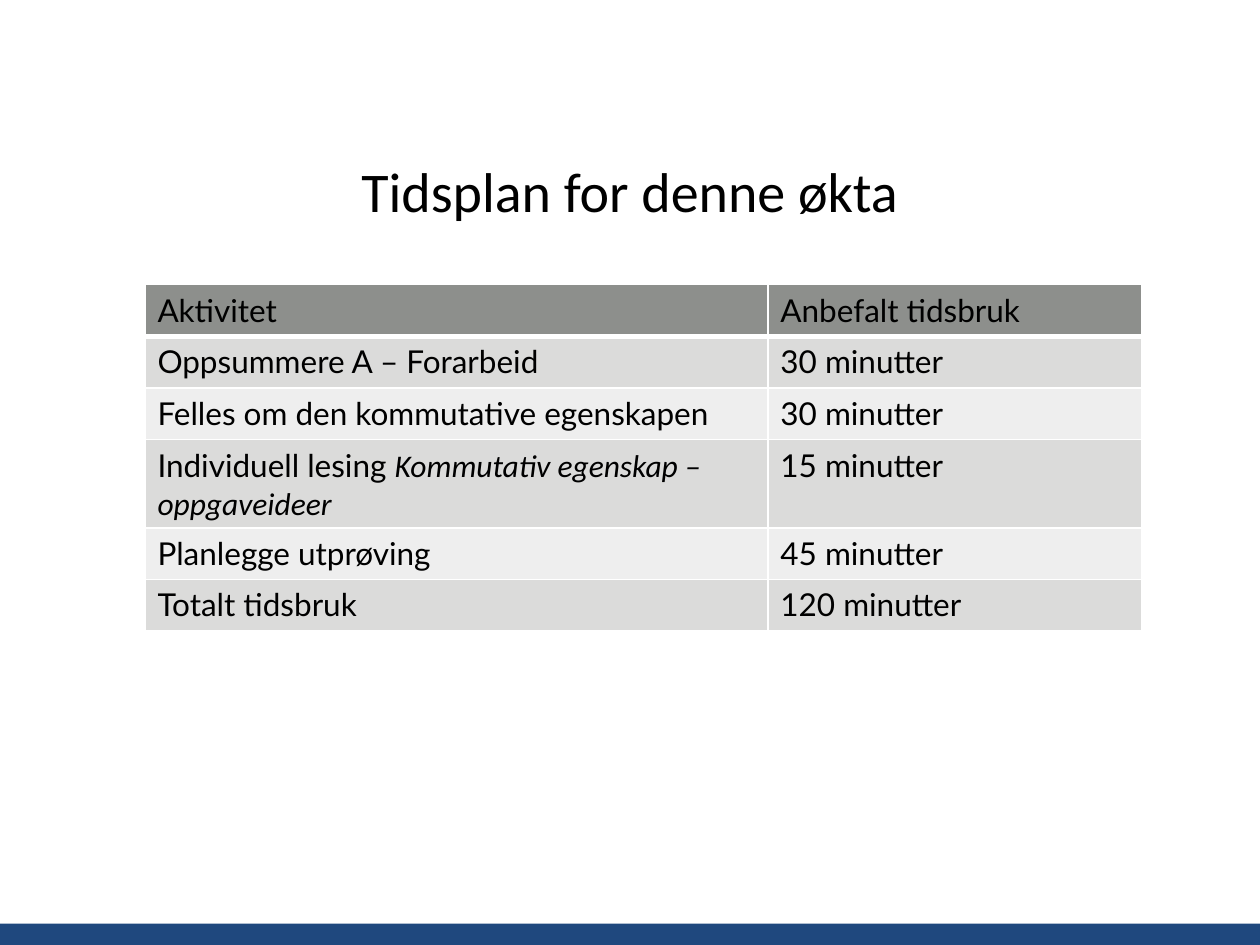
from lxml import etree
from pptx import Presentation
from pptx.dml.color import RGBColor
from pptx.enum.shapes import MSO_SHAPE
from pptx.enum.text import MSO_ANCHOR, PP_ALIGN
from pptx.oxml.ns import qn
from pptx.util import Inches, Pt

RECTANGLE = MSO_SHAPE.RECTANGLE
MIDDLE = MSO_ANCHOR.MIDDLE
LEFT, CENTER = PP_ALIGN.LEFT, PP_ALIGN.CENTER

WIDTH, HEIGHT = 10, 7.5
FOOTER_HEIGHT = 0.17
ROW_HEIGHT = 0.41
COLUMN_SHARES = (0.625, 0.375)
HEADER_FILL = "8D8F8C"
BAND_FILLS = ("DBDBDA", "EEEEEE")
WHITE, BLACK, BLUE = "FFFFFF", "000000", "1F487E"

SCHEDULE = [
    ("Aktivitet", "Anbefalt tidsbruk"),
    ("Oppsummere A – Forarbeid", "30 minutter"),
    ("Felles om den kommutative egenskapen", "30 minutter"),
    ("Individuell lesing ", "15 minutter"),
    ("Planlegge utprøving", "45 minutter"),
    ("Totalt tidsbruk", "120 minutter"),
]
ITALIC_ENDINGS = {(3, 0): "Kommutativ egenskap – oppgaveideer"}


def color(value):
    return RGBColor.from_string(value)


def paint(fill, value):
    fill.solid()
    fill.fore_color.rgb = color(value)


def add_text(paragraph, text, font="Lato", size=18, italic=False, align=LEFT):
    paragraph.alignment = align
    run = paragraph.add_run()
    run.text = text
    run.font.name = font
    run.font.size = Pt(size)
    run.font.italic = italic
    run.font.color.rgb = color(BLACK)


def set_borders(cell, **widths):
    """Draw white borders; widths in points are keyed by side: L, R, T, B."""
    properties = cell._tc.get_or_add_tcPr()
    for index, (side, width) in enumerate(widths.items()):
        line = etree.Element(qn(f"a:ln{side}"), w=str(Pt(width)))
        fill = etree.SubElement(line, qn("a:solidFill"))
        etree.SubElement(fill, qn("a:srgbClr"), val=WHITE)
        properties.insert(index, line)


def add_footer_bar(slide, box):
    bar = slide.shapes.add_shape(RECTANGLE, *map(Inches, box))
    bar.shadow.inherit = False
    paint(bar.fill, BLUE)
    bar.line.fill.background()


def add_title(slide, box, text):
    frame = slide.shapes.add_textbox(*map(Inches, box)).text_frame
    frame.word_wrap = True
    frame.vertical_anchor = MIDDLE
    add_text(frame.paragraphs[0], text, font="Calibri", size=32, align=CENTER)


def add_schedule(slide, box):
    table = slide.shapes.add_table(
        len(SCHEDULE), len(COLUMN_SHARES), *map(Inches, box)).table
    for column, share in zip(table.columns, COLUMN_SHARES):
        column.width = Inches(box[2] * share)
    for row, texts in enumerate(SCHEDULE):
        table.rows[row].height = Inches(ROW_HEIGHT)
        for column, text in enumerate(texts):
            cell = table.cell(row, column)
            paint(cell.fill, BAND_FILLS[(row - 1) % 2] if row else HEADER_FILL)
            set_borders(cell, L=1, R=1, T=1 if row != 1 else 3, B=1 if row else 3)
            paragraph = cell.text_frame.paragraphs[0]
            add_text(paragraph, text)
            if (row, column) in ITALIC_ENDINGS:
                add_text(paragraph, ITALIC_ENDINGS[row, column],
                         font="Calibri", italic=True)


def main():
    presentation = Presentation()
    presentation.slide_width = Inches(WIDTH)
    presentation.slide_height = Inches(HEIGHT)
    slide = presentation.slides.add_slide(presentation.slide_layouts[6])
    add_footer_bar(slide, (0, HEIGHT - FOOTER_HEIGHT, WIDTH, FOOTER_HEIGHT))
    add_title(slide, (0.05 * WIDTH, 1, 0.9 * WIDTH, 1.01), "Tidsplan for denne økta")
    add_schedule(slide, (1.15, 2.26, 7.91, ROW_HEIGHT * len(SCHEDULE)))
    presentation.save("out.pptx")


if __name__ == "__main__":
    main()
